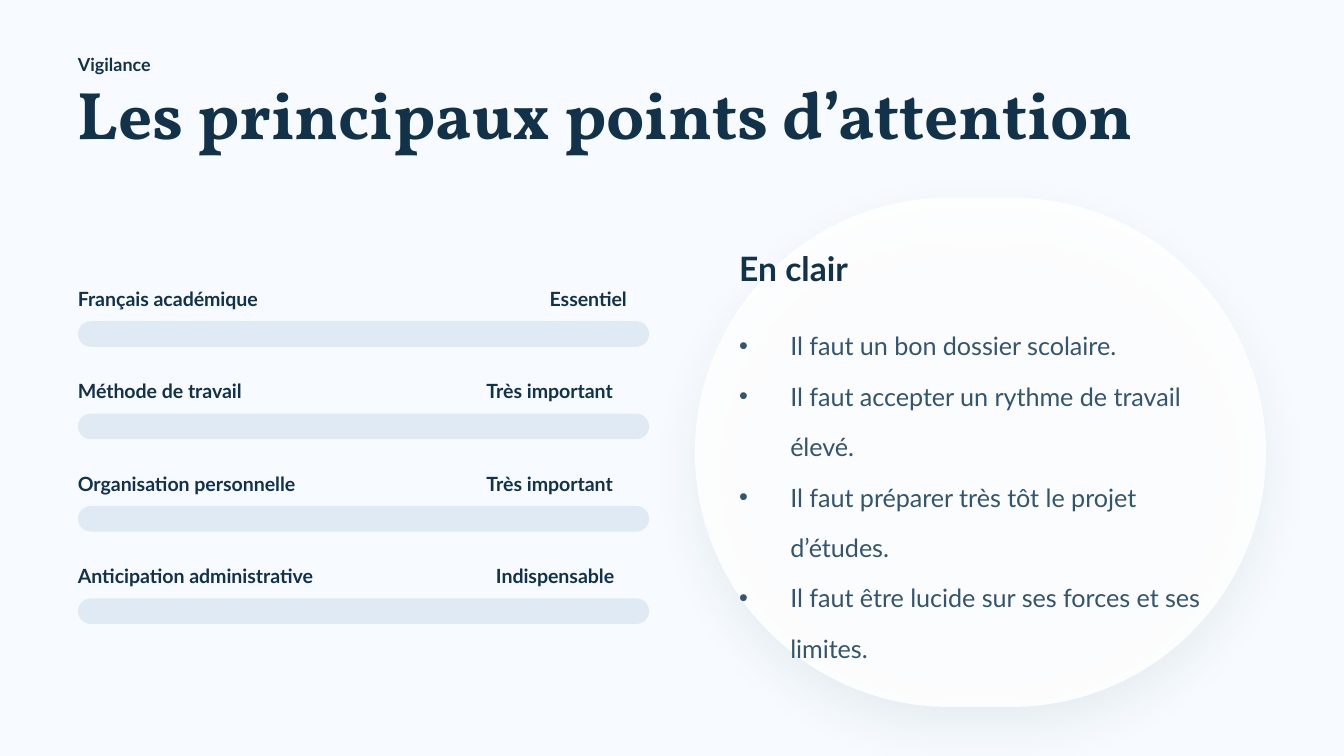
from lxml import etree
from pptx import Presentation
from pptx.dml.color import RGBColor
from pptx.enum.shapes import MSO_SHAPE
from pptx.enum.text import MSO_ANCHOR, MSO_AUTO_SIZE, PP_ALIGN
from pptx.oxml.ns import qn
from pptx.util import Inches, Pt

ROUNDED = MSO_SHAPE.ROUNDED_RECTANGLE
TOP = MSO_ANCHOR.TOP
NO_AUTOFIT = MSO_AUTO_SIZE.NONE
LEFT = PP_ALIGN.LEFT

BACKGROUND = RGBColor(0xF7, 0xFB, 0xFF)
NAVY = RGBColor(0x12, 0x32, 0x4A)
SLATE = RGBColor(0x34, 0x55, 0x6E)
BAR_BLUE = RGBColor(0xDF, 0xEA, 0xF4)
WHITE = RGBColor(0xFF, 0xFF, 0xFF)

TITLE_FONT = "Vollkorn"
BODY_FONT = "Lato"

# Label, its width, rating, its offset from the left of the row, its width
CRITERIA = [
    ("Français académique", 1.77, "Essentiel", 3.51, 0.76),
    ("Méthode de travail", 1.59, "Très important", 3.04, 1.24),
    ("Organisation personnelle", 2.12, "Très important", 3.04, 1.24),
    ("Anticipation administrative", 2.29, "Indispensable", 3.11, 1.17),
]
ADVICE = [
    "Il faut un bon dossier scolaire.",
    "Il faut accepter un rythme de travail élevé.",
    "Il faut préparer très tôt le projet d’études.",
    "Il faut être lucide sur ses forces et ses limites.",
]


def add_bullet(paragraph, indent):
    properties = paragraph._p.get_or_add_pPr()
    properties.set("marL", str(Inches(indent)))
    properties.set("indent", str(-Inches(indent)))
    etree.SubElement(properties, qn("a:buFont"), typeface="Arial")
    etree.SubElement(properties, qn("a:buChar"), char="•")


def write_text(shape, lines, size, line_height, color=NAVY, font=BODY_FONT,
               bold=True, indent=0):
    frame = shape.text_frame
    frame.word_wrap = True
    frame.auto_size = NO_AUTOFIT
    frame.vertical_anchor = TOP
    frame.margin_left = frame.margin_right = 0
    frame.margin_top = frame.margin_bottom = 0
    for index, line in enumerate(lines):
        paragraph = frame.add_paragraph() if index else frame.paragraphs[0]
        paragraph.alignment = LEFT
        paragraph.line_spacing = Pt(line_height)
        if indent:
            add_bullet(paragraph, indent)
        run = paragraph.add_run()
        run.text = line
        run.font.name = font
        run.font.size = Pt(size)
        run.font.bold = bold
        run.font.color.rgb = color


def add_text(slide, left, top, width, height, lines, size, line_height, **style):
    box = slide.shapes.add_textbox(Inches(left), Inches(top),
                                   Inches(width), Inches(height))
    write_text(box, lines, size, line_height, **style)


def add_pill(slide, left, top, width, height, color):
    shape = slide.shapes.add_shape(ROUNDED, Inches(left), Inches(top),
                                   Inches(width), Inches(height))
    shape.adjustments[0] = 0.5
    shape.fill.solid()
    shape.fill.fore_color.rgb = color
    shape.line.fill.background()
    shape.shadow.inherit = False
    return shape


def soften_card(card):
    """Make the fill slightly transparent and cast a soft shadow below."""
    properties = card._element.spPr
    fill_color = properties.find(qn("a:solidFill")).find(qn("a:srgbClr"))
    etree.SubElement(fill_color, qn("a:alpha"), val="88000")
    shadow = etree.SubElement(
        properties.find(qn("a:effectLst")), qn("a:outerShdw"),
        blurRad=str(Pt(25.5)), dist=str(Pt(10.5)), dir=str(90 * 60000),
        algn="ctr", rotWithShape="0")
    shadow_color = etree.SubElement(shadow, qn("a:srgbClr"), val=str(NAVY))
    etree.SubElement(shadow_color, qn("a:alpha"), val="7000")


def add_header(slide, left, top, width):
    add_text(slide, left, top, width, 0.2, ["Vigilance"], 9.6, 14.4)
    title = slide.shapes.title
    title.left, title.top = Inches(left), Inches(top + 0.28)
    title.width, title.height = Inches(width), Inches(0.5)
    write_text(title, ["Les principaux points d’attention"], 36, 36,
               font=TITLE_FONT)


def add_criteria(slide, left, top, width, height):
    pitch = height / len(CRITERIA)
    for index, criterion in enumerate(CRITERIA):
        label, label_width, rating, offset, rating_width = criterion
        row_top = top + index * pitch
        add_pill(slide, left, row_top + 0.29, width, 0.19, BAR_BLUE)
        add_text(slide, left, row_top, label_width, 0.21, [label], 10.5, 15)
        add_text(slide, left + offset, row_top, rating_width, 0.21, [rating],
                 10.5, 15)


def add_summary_card(slide, left, top, width, height):
    soften_card(add_pill(slide, left, top, width, height, WHITE))
    text_left = left + 0.33
    add_text(slide, text_left, top + 0.34, 3.65, 0.33, ["En clair"], 18, 24)
    add_text(slide, text_left, top + 0.84, 3.58, 2.62, ADVICE, 13.5, 27,
             color=SLATE, bold=False, indent=0.38)


def main():
    presentation = Presentation()
    # Widescreen 16:9
    presentation.slide_width = Inches(10)
    presentation.slide_height = Inches(10) * 9 // 16
    title_only = presentation.slide_layouts[5]
    slide = presentation.slides.add_slide(title_only)
    slide.background.fill.solid()
    slide.background.fill.fore_color.rgb = BACKGROUND

    add_header(slide, 0.58, 0.36, 9.01)
    add_criteria(slide, 0.58, 2.1, 4.25, 2.75)
    add_summary_card(slide, 5.17, 1.47, 4.25, 3.79)
    presentation.save("out.pptx")


if __name__ == "__main__":
    main()
